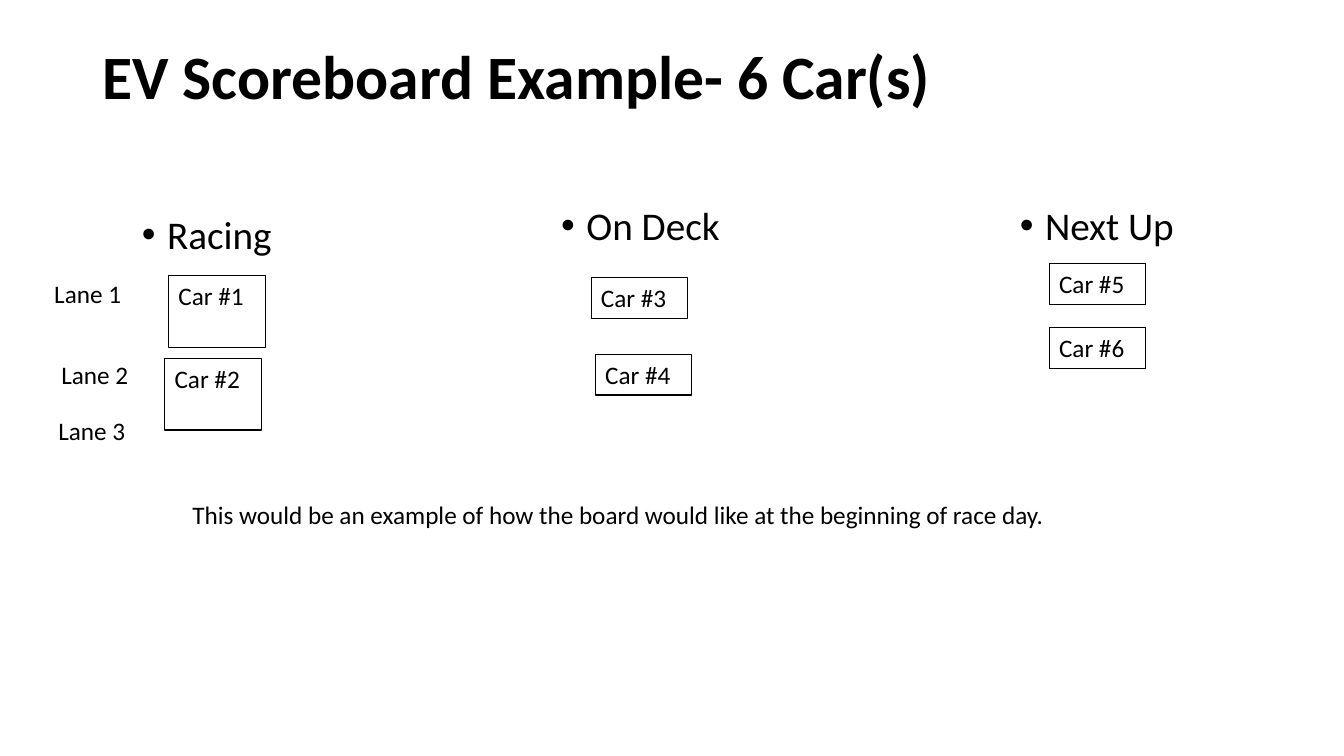
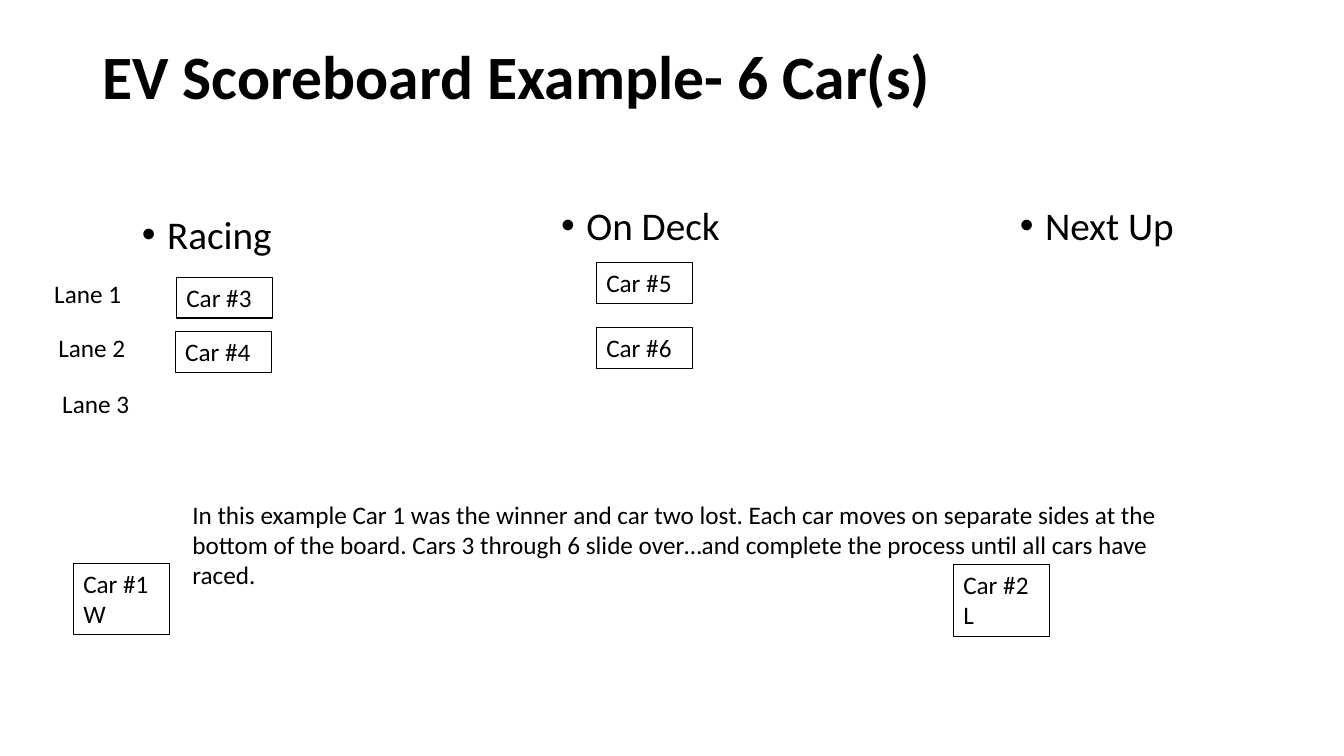
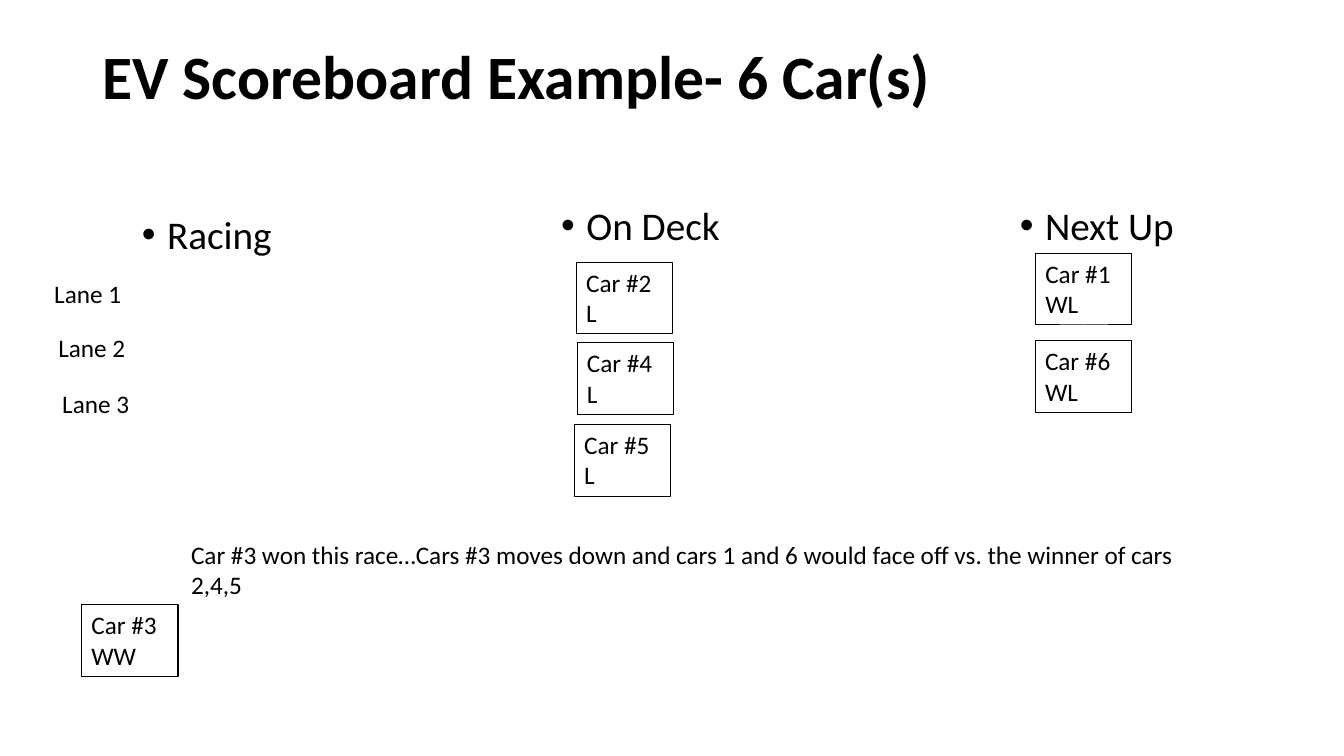
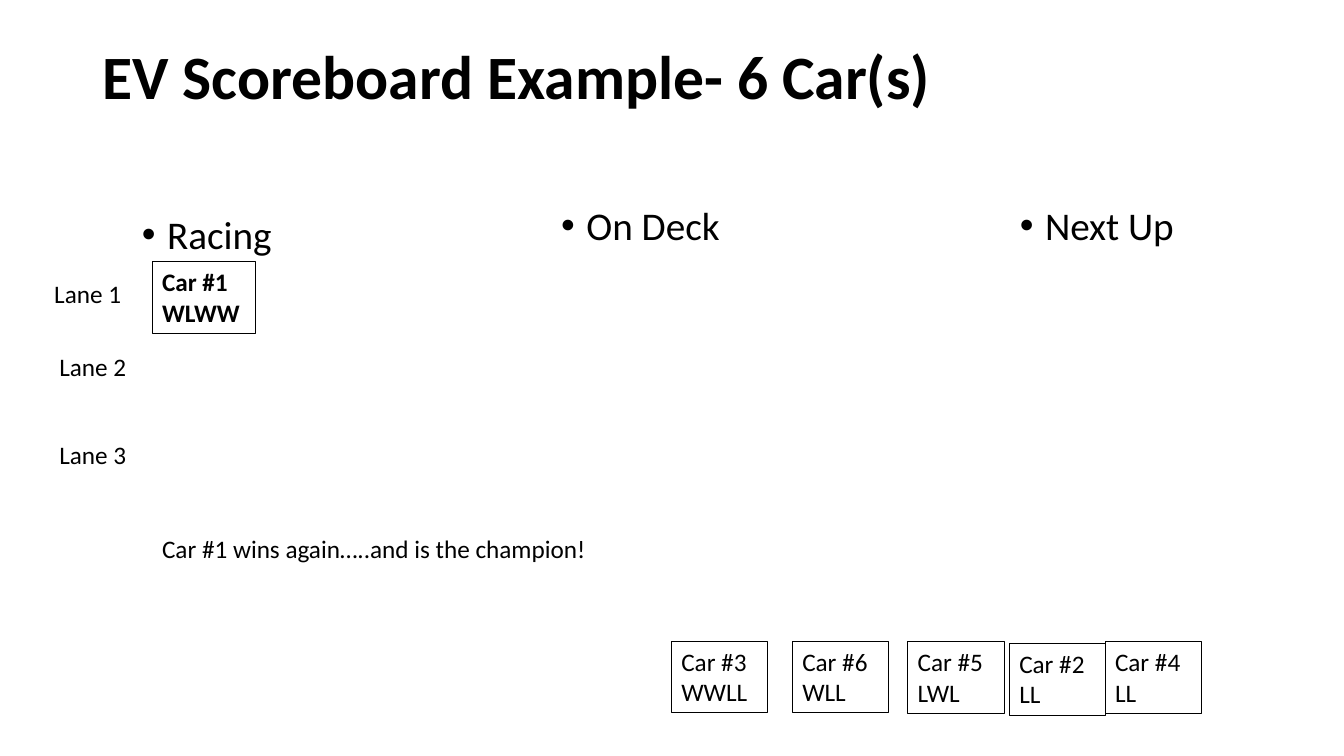
from lxml import etree
from pptx import Presentation
from pptx.dml.color import RGBColor
from pptx.enum import shapes, text
from pptx.oxml import ns
from pptx.util import Pt

COLORS = {"ink": "000000", "paper": "FFFFFF"}
FONT = "Calibri"
TITLE = "EV Scoreboard Example- 6 Car(s)"
HEADINGS = [("Racing", 94.3, 150.5), ("On Deck", 393.8, 144), ("Next Up", 721.4, 144)]
CAR_WIDTH, CHAMPION_WIDTH = 69, 73.6
LINE_HEIGHT, PADDING = 22, 7.2

BOARDS = [
    {
        "cars": [(1, "", 120.4, 196.8), (2, "", 117.6, 256), (3, "", 422.2, 198.4),
                 (4, "", 425.2, 253), (5, "", 749.4, 188.2), (6, "", 749.4, 234)],
        "tall": (1, 2),
        "lanes": [(31.7, 195.1), (36.7, 253.4), (34.6, 293)],
        "note": ("This would be an example of how the board would like at the "
                 "beginning of race day.", 130.3, 352.8, 1),
    },
    {
        "cars": [(1, "W", 52.4, 402.4), (2, "L", 681, 403.3), (3, "", 126, 198),
                 (4, "", 125.2, 237), (5, "", 426, 187.4), (6, "", 426, 234)],
        "lanes": [(31.7, 195.1), (34.6, 234), (37.4, 273.6)],
        "note": ("In this example Car 1 was the winner and car two lost. Each car moves on "
                 "separate sides at the bottom of the board. Cars 3 through 6 slide over…and "
                 "complete the process until all cars have raced.", 130.3, 352.8, 3),
    },
    {
        "cars": [(1, "WL", 739.6, 181), (2, "L", 411.6, 187.4), (3, "WW", 58.2, 432),
                 (4, "L", 412.2, 244.8), (5, "L", 410.2, 303.2), (6, "WL", 739.4, 243.4)],
        "lanes": [(31.7, 195.1), (34.6, 234), (37.4, 273.6)],
        "note": ("Car #3 won this race…Cars #3 moves down and cars 1 and 6 would face off "
                 "vs. the winner of cars 2,4,5", 129.4, 381.6, 2),
    },
    {
        "cars": [(1, "WLWW", 108.7, 187), (2, "LL", 721, 459.6), (3, "WWLL", 479.6, 458),
                 (4, "LL", 789.4, 458.4), (5, "LWL", 648.4, 458.4), (6, "WLL", 566, 458)],
        "champion": 1,
        "lanes": [(31.7, 195.1), (35.3, 247.7), (35.3, 310.3)],
        "note": ("Car #1 wins again…..and is the champion!", 108.7, 377.3, 1),
    },
]


def color(name):
    return RGBColor.from_string(COLORS[name])


def height_of(lines):
    return lines * LINE_HEIGHT + PADDING


def add_bullet(para):
    props = para._p.get_or_add_pPr()
    props.set("marL", str(Pt(18)))
    props.set("indent", str(-Pt(18)))
    etree.SubElement(props, ns.qn("a:buFont")).set("typeface", "Arial")
    etree.SubElement(props, ns.qn("a:buChar")).set("char", "•")


def put_text(page, words, left, top, width, height, size=18, bold=False, framed=False,
             bullet=False, spacing=None, anchor=text.MSO_ANCHOR.TOP, bottom=3.6):
    place = [Pt(value) for value in (left, top, width, height)]
    if framed:
        box = page.shapes.add_shape(shapes.MSO_SHAPE.RECTANGLE, *place)
        box.shadow.inherit = False
        box.fill.background()
        box.line.color.rgb = color("ink")
        box.line.width = Pt(0.75)
    else:
        box = page.shapes.add_textbox(*place)
    frame = box.text_frame
    frame.word_wrap = True
    frame.vertical_anchor = anchor
    frame.margin_bottom = Pt(bottom)
    frame.text = words
    for para in frame.paragraphs:
        para.alignment = text.PP_ALIGN.LEFT
        if spacing:
            para.line_spacing = spacing
        if bullet:
            add_bullet(para)
        for span in para.runs:
            span.font.name = FONT
            span.font.size = Pt(size)
            span.font.bold = bold
            span.font.color.rgb = color("ink")


def add_board(deck, board):
    page = deck.slides.add_slide(deck.slide_layouts[6])
    page.background.fill.solid()
    page.background.fill.fore_color.rgb = color("paper")
    put_text(page, TITLE, 66.2, 28.8, 828, 104.4, size=44, bold=True, spacing=0.9,
             anchor=text.MSO_ANCHOR.MIDDLE, bottom=52)
    for heading, left, top in HEADINGS:
        put_text(page, heading, left, top, 172.8, 70, size=28, bullet=True, spacing=0.9)
    for number, result, left, top in board["cars"]:
        words = f"Car #{number}\n{result}" if result else f"Car #{number}"
        lines = 2 if result or number in board.get("tall", ()) else 1
        champion = number == board.get("champion")
        put_text(page, words, left, top, CHAMPION_WIDTH if champion else CAR_WIDTH,
                 height_of(lines), bold=champion, framed=True)
    for number, (left, top) in enumerate(board["lanes"], 1):
        put_text(page, f"Lane {number}", left, top, CAR_WIDTH, height_of(1))
    words, left, top, lines = board["note"]
    put_text(page, words, left, top, 720, height_of(lines))


def main():
    deck = Presentation()
    deck.slide_width, deck.slide_height = Pt(960), Pt(540)
    for board in BOARDS:
        add_board(deck, board)
    deck.save("out.pptx")


if __name__ == "__main__":
    main()
